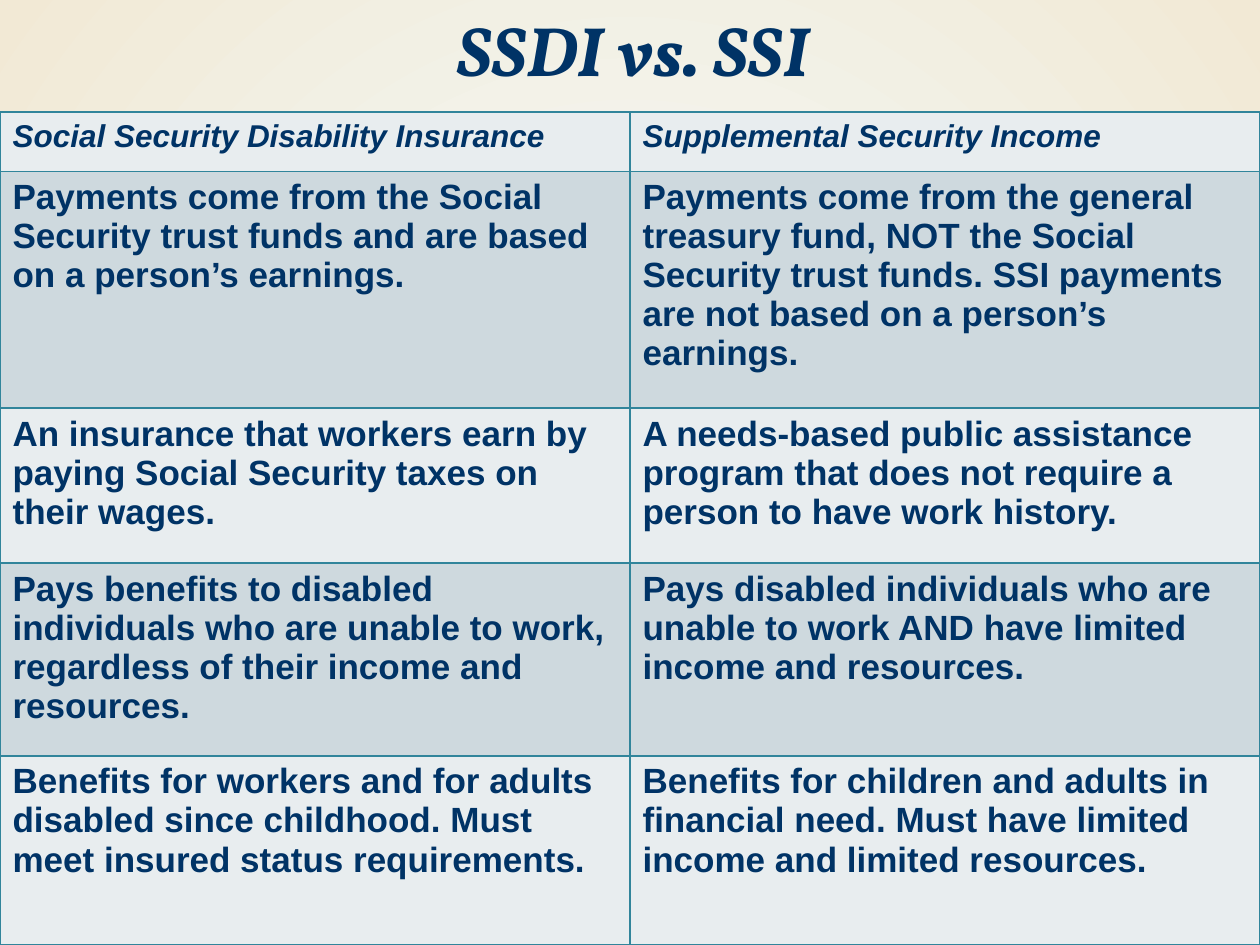
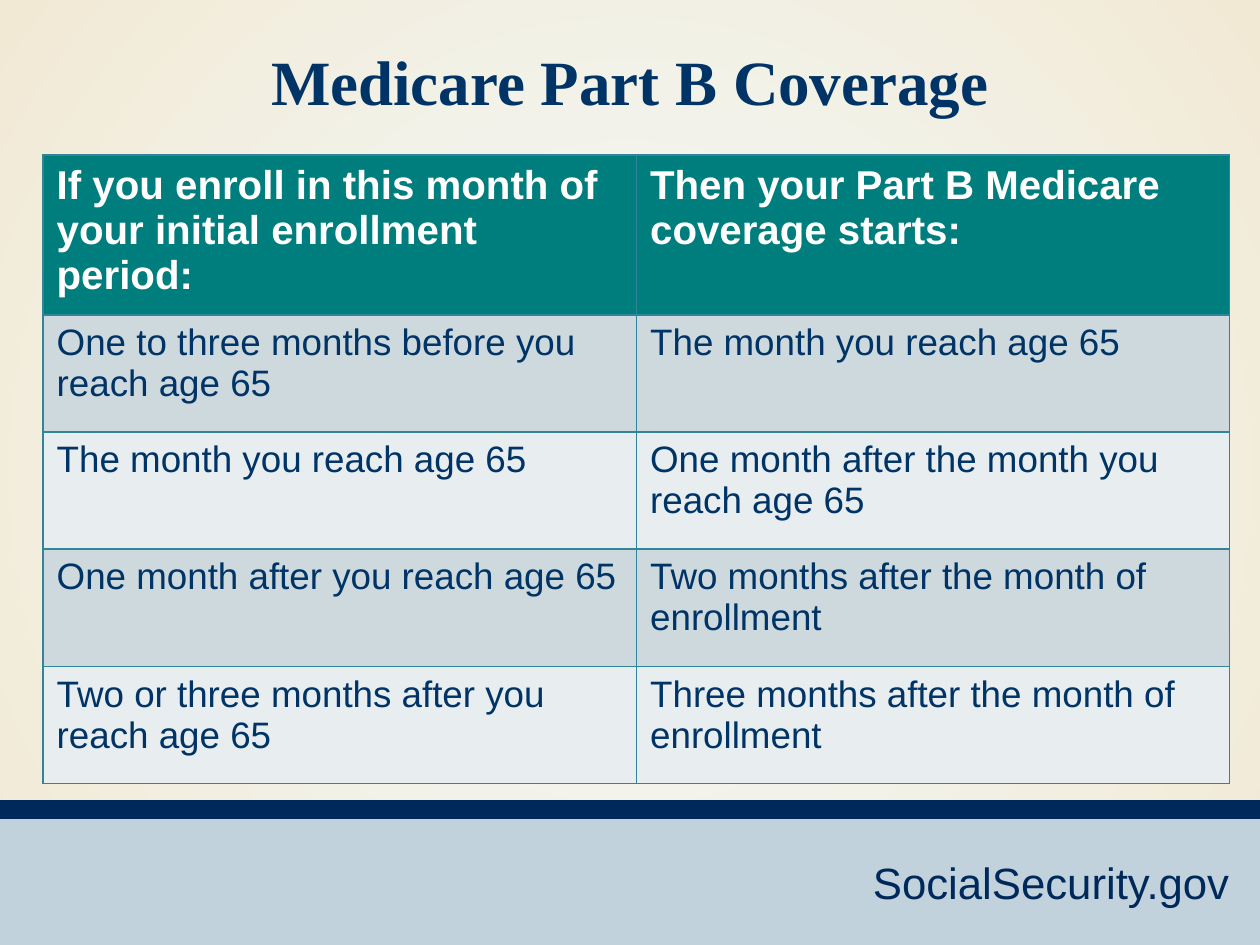
from lxml import etree
from pptx import Presentation
from pptx import util as u
from pptx.dml.color import RGBColor
from pptx.enum import shapes, text
from pptx.oxml import ns

NAVY = RGBColor(0x00, 0x33, 0x66)
BAND_NAVY = RGBColor(0x00, 0x29, 0x5B)
BAND_BLUE = RGBColor(0xC1, 0xD2, 0xDC)
TEAL = RGBColor(0x00, 0x7D, 0x7D)
WHITE = RGBColor(0xFF, 0xFF, 0xFF)
ROW_DARK = RGBColor(0xCE, 0xD9, 0xDE)
ROW_LIGHT = RGBColor(0xE8, 0xED, 0xEF)
BORDER = RGBColor(0x31, 0x85, 0x9B)
CENTRE_GLOW = RGBColor(0xF3, 0xFA, 0xFB)
EDGE_CREAM = RGBColor(0xF2, 0xE9, 0xD5)
TITLE_ONLY = 5


def write(frame, words, size, font="Arial", color=NAVY, bold=False,
          italic=False, align=text.PP_ALIGN.LEFT):
    """Put one formatted paragraph into a text frame."""
    para = frame.paragraphs[0]
    para.alignment = align
    span = para.add_run()
    span.text = words
    span.font.size = u.Pt(size)
    span.font.name = font
    span.font.color.rgb = color
    span.font.bold = bold
    span.font.italic = italic


def outline_cell(cell):
    """Draw a thin line on all four sides of a table cell."""
    properties = cell._tc.get_or_add_tcPr()
    for place, side in enumerate(("lnL", "lnR", "lnT", "lnB")):
        line = etree.Element(ns.qn(f"a:{side}"), w=str(u.Pt(1)))
        fill = etree.SubElement(line, ns.qn("a:solidFill"))
        etree.SubElement(fill, ns.qn("a:srgbClr"), val=str(BORDER))
        properties.insert(place, line)


class SlideBuilder:
    def __init__(self):
        self.deck = Presentation()
        self.deck.slide_width = u.Inches(10)
        self.deck.slide_height = u.Inches(7.5)
        self.page = None
        self.set_background()

    def set_background(self):
        """Give the master a round gradient that all slides share."""
        master = self.deck.slide_master
        fill = master.background.fill
        fill.gradient()
        for stop, color in zip(fill.gradient_stops, (CENTRE_GLOW, EDGE_CREAM)):
            stop.color.rgb = color
        gradient = master._element.find(f".//{ns.qn('p:bg')}//{ns.qn('a:gradFill')}")
        gradient.remove(gradient.find(ns.qn("a:lin")))
        circle = etree.Element(ns.qn("a:path"), path="circle")
        etree.SubElement(circle, ns.qn("a:fillToRect"),
                         l="50000", t="50000", r="50000", b="50000")
        gradient.find(ns.qn("a:gsLst")).addnext(circle)

    def new_page(self):
        """Start a slide with the footer that every slide shares."""
        layout = self.deck.slide_layouts[TITLE_ONLY]
        self.page = self.deck.slides.add_slide(layout)
        self.footer()

    def title(self, words, left, top, width, height, size, **style):
        box = self.page.shapes.title
        box.left, box.top = u.Inches(left), u.Inches(top)
        box.width, box.height = u.Inches(width), u.Inches(height)
        frame = box.text_frame
        frame.auto_size = text.MSO_AUTO_SIZE.NONE
        frame.vertical_anchor = text.MSO_ANCHOR.TOP
        write(frame, words, size, bold=True,
              align=text.PP_ALIGN.CENTER, **style)

    def band(self, top, height, color):
        band = self.page.shapes.add_shape(
            shapes.MSO_SHAPE.RECTANGLE, u.Inches(0), u.Inches(top),
            u.Inches(10), u.Inches(height))
        band.shadow.inherit = False
        band.fill.solid()
        band.fill.fore_color.rgb = color
        band.line.fill.background()

    def footer(self):
        self.band(6.45, 1.05, BAND_BLUE)
        self.band(6.35, 0.15, BAND_NAVY)
        box = self.page.shapes.add_textbox(
            u.Inches(6.83), u.Inches(6.74), u.Inches(3.07), u.Inches(0.52))
        box.text_frame.word_wrap = True
        write(box.text_frame, "SocialSecurity.gov", 25, color=BAND_NAVY)

    def table(self, rows, left, top, width, heights, header, body,
              header_fill, body_fills, margins=(0.1, 0.05)):
        """Add a grid with a header style and alternating body fills."""
        columns = len(rows[0])
        table = self.page.shapes.add_table(
            len(rows), columns, u.Inches(left), u.Inches(top),
            u.Inches(width), u.Inches(sum(heights))).table
        table.first_row = table.horz_banding = False
        for column in table.columns:
            column.width = u.Inches(width / columns)
        for r, (words_in_row, height) in enumerate(zip(rows, heights)):
            table.rows[r].height = u.Inches(height)
            for c, words in enumerate(words_in_row):
                cell = table.cell(r, c)
                cell.margin_left = cell.margin_right = u.Inches(margins[0])
                cell.margin_top = cell.margin_bottom = u.Inches(margins[1])
                cell.fill.solid()
                cell.fill.fore_color.rgb = (
                    body_fills[(r - 1) % 2] if r else header_fill)
                outline_cell(cell)
                write(cell.text_frame, words, **(body if r else header))


BENEFIT_ROWS = [
    ("Social Security Disability Insurance", "Supplemental Security Income"),
    ("Payments come from the Social Security trust funds and are based on "
     "a person’s earnings.",
     "Payments come from the general treasury fund, NOT the Social Security "
     "trust funds. SSI payments are not based on a person’s earnings."),
    ("An insurance that workers earn by paying Social Security taxes on "
     "their wages.",
     "A needs-based public assistance program that does not require a person "
     "to have work history."),
    ("Pays benefits to disabled individuals who are unable to work, "
     "regardless of their income and resources.",
     "Pays disabled individuals who are unable to work AND have limited "
     "income and resources."),
    ("Benefits for workers and for adults disabled since childhood. Must "
     "meet insured status requirements.",
     "Benefits for children and adults in financial need. Must have limited "
     "income and limited resources."),
]

ENROLLMENT_ROWS = [
    ("If you enroll in this month of your initial enrollment period:",
     "Then your Part B Medicare coverage starts:"),
    ("One to three months before you reach age 65",
     "The month you reach age 65"),
    ("The month you reach age 65",
     "One month after the month you reach age 65"),
    ("One month after you reach age 65",
     "Two months after the month of enrollment"),
    ("Two or three months after you reach age 65",
     "Three months after the month of enrollment"),
]


def main():
    builder = SlideBuilder()

    # Benefit comparison; the table fills the page down to its foot
    builder.new_page()
    builder.title("SSDI vs. SSI", 3.37, 0, 3.31, 0.77, 40,
                  font="Vollkorn", italic=True)
    builder.table(BENEFIT_ROWS, 0, 0.89, 10, [0.47, 1.88, 1.23, 1.53, 1.5],
                  header=dict(size=18, bold=True, italic=True),
                  body=dict(size=20, bold=True),
                  header_fill=ROW_LIGHT, body_fills=(ROW_DARK, ROW_LIGHT))

    # Enrollment months and coverage start
    builder.new_page()
    builder.title("Medicare Part B Coverage", 0, 0.29, 10, 0.71, 36,
                  font="Times New Roman")
    builder.table(ENROLLMENT_ROWS, 0.34, 1.23, 9.42, [1.25] + [0.93] * 4,
                  header=dict(size=23, color=WHITE, bold=True),
                  body=dict(size=21),
                  header_fill=TEAL, body_fills=(ROW_DARK, ROW_LIGHT),
                  margins=(0.11, 0.06))

    builder.deck.save("out.pptx")


if __name__ == "__main__":
    main()
